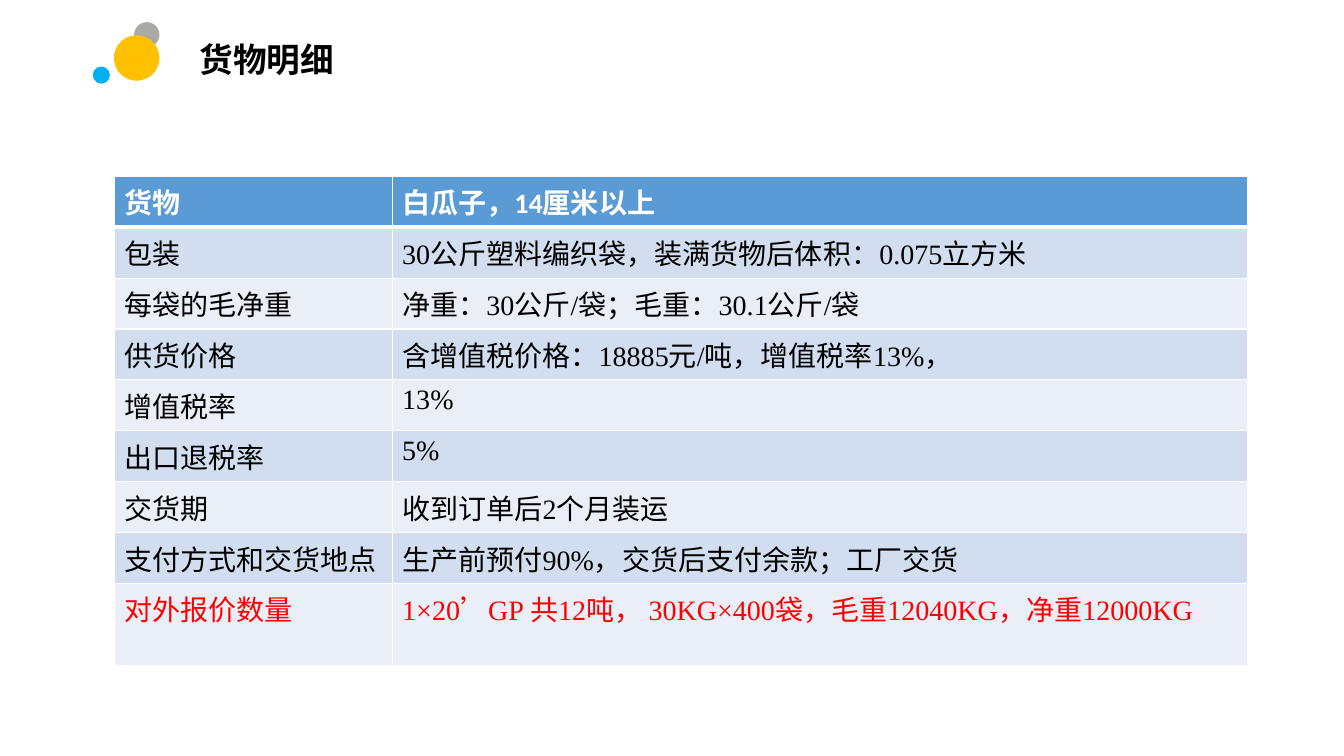
from dataclasses import dataclass

from lxml import etree
from pptx import Presentation
from pptx.dml.color import RGBColor
from pptx.enum.shapes import MSO_SHAPE
from pptx.enum.text import MSO_ANCHOR
from pptx.oxml.ns import qn
from pptx.slide import Slide
from pptx.table import _Cell
from pptx.text.text import TextFrame
from pptx.util import Emu, Inches, Pt

OVAL = MSO_SHAPE.OVAL
MIDDLE = MSO_ANCHOR.MIDDLE

SLIDE_WIDTH = Inches(13.33)
SLIDE_HEIGHT = Inches(7.5)

BLACK = RGBColor(0x00, 0x00, 0x00)
WHITE = RGBColor(0xFF, 0xFF, 0xFF)
RED = RGBColor(0xFF, 0x00, 0x00)
GREY = RGBColor(0xA8, 0xAA, 0xA5)
AMBER = RGBColor(0xFF, 0xC0, 0x00)
SKY = RGBColor(0x00, 0xB0, 0xF0)
HEADER_BLUE = RGBColor(0x5B, 0x9B, 0xD5)
BANDS = (RGBColor(0xEA, 0xEF, 0xF7), RGBColor(0xD2, 0xDE, 0xEF))

HEADING_FONT = "Calibri"
BODY_FONT = "Times New Roman"

# Shares are percentages of the slide's width or height.
TABLE_LEFT, TABLE_TOP = 8.48, 23.33
COLUMN_SHARES = (20.7, 63.67)
ROW_SHARE, LAST_ROW_SHARE = 6.73, 10.8


@dataclass(frozen=True)
class Dot:
    left: float
    top: float
    diameter: float
    color: RGBColor


@dataclass(frozen=True)
class Detail:
    label: str
    value: str
    color: RGBColor = BLACK


DOTS = (
    Dot(9.98, 2.93, 1.88, GREY),
    Dot(8.48, 4.67, 3.38, AMBER),
    Dot(6.9, 8.8, 1.28, SKY),
)

DETAILS = (
    Detail("货物", "白瓜子，14厘米以上", WHITE),
    Detail("包装", "30公斤塑料编织袋，装满货物后体积：0.075立方米"),
    Detail("每袋的毛净重", "净重：30公斤/袋；毛重：30.1公斤/袋"),
    Detail("供货价格", "含增值税价格：18885元/吨，增值税率13%，"),
    Detail("增值税率", "13%"),
    Detail("出口退税率", "5%"),
    Detail("交货期", "收到订单后2个月装运"),
    Detail("支付方式和交货地点", "生产前预付90%，交货后支付余款；工厂交货"),
    Detail("对外报价数量", "1×20’GP 共12吨， 30KG×400袋，毛重12040KG，净重12000KG", RED),
)


def across(share: float) -> Emu:
    return Emu(round(SLIDE_WIDTH * share / 100))


def down(share: float) -> Emu:
    return Emu(round(SLIDE_HEIGHT * share / 100))


def write_text(frame: TextFrame, text: str, *, font: str, size: float,
               color: RGBColor, bold: bool = False,
               line_spacing: float = 1.0) -> None:
    paragraph = frame.paragraphs[0]
    paragraph.line_spacing = line_spacing
    run = paragraph.add_run()
    run.text = text
    run.font.name = font
    run.font.size = Pt(size)
    run.font.bold = bold
    run.font.color.rgb = color


def draw_dot(slide: Slide, dot: Dot) -> None:
    diameter = across(dot.diameter)
    shape = slide.shapes.add_shape(OVAL, across(dot.left), down(dot.top),
                                   diameter, diameter)
    shape.shadow.inherit = False
    shape.fill.solid()
    shape.fill.fore_color.rgb = dot.color
    shape.line.fill.background()


def draw_title(slide: Slide, text: str) -> None:
    box = slide.shapes.add_textbox(across(14.1), down(4.67),
                                   across(34.66), down(7.07))
    box.text_frame.word_wrap = True
    box.text_frame.vertical_anchor = MIDDLE
    write_text(box.text_frame, text, font=HEADING_FONT, size=24,
               color=BLACK, bold=True, line_spacing=0.9)


def style_cell(cell: _Cell, fill: RGBColor, top: float, bottom: float) -> None:
    """Give the cell white borders, with widths in points, and a fill."""
    properties = cell._tc.get_or_add_tcPr()
    widths = {"a:lnL": 1, "a:lnR": 1, "a:lnT": top, "a:lnB": bottom}
    for tag, width in widths.items():
        border = etree.SubElement(properties, qn(tag), w=str(Pt(width)))
        solid = etree.SubElement(border, qn("a:solidFill"))
        etree.SubElement(solid, qn("a:srgbClr"), val=str(WHITE))
    cell.fill.solid()
    cell.fill.fore_color.rgb = fill


def draw_details(slide: Slide, details: tuple[Detail, ...]) -> None:
    row_shares = [ROW_SHARE] * (len(details) - 1) + [LAST_ROW_SHARE]
    table = slide.shapes.add_table(
        len(details), len(COLUMN_SHARES), across(TABLE_LEFT), down(TABLE_TOP),
        across(sum(COLUMN_SHARES)), down(sum(row_shares))).table
    for column, share in zip(table.columns, COLUMN_SHARES):
        column.width = across(share)
    for index, (detail, share) in enumerate(zip(details, row_shares)):
        is_header = index == 0
        table.rows[index].height = down(share)
        for column_index, text in enumerate((detail.label, detail.value)):
            cell = table.cell(index, column_index)
            style_cell(cell, HEADER_BLUE if is_header else BANDS[index % 2],
                       top=3 if index == 1 else 1,
                       bottom=3 if is_header else 1)
            write_text(cell.text_frame, text,
                       font=HEADING_FONT if is_header else BODY_FONT,
                       size=20, color=detail.color, bold=is_header)


def main() -> None:
    presentation = Presentation()
    presentation.slide_width = SLIDE_WIDTH
    presentation.slide_height = SLIDE_HEIGHT
    slide = presentation.slides.add_slide(presentation.slide_layouts[6])
    draw_details(slide, DETAILS)
    for dot in DOTS:
        draw_dot(slide, dot)
    draw_title(slide, "货物明细")
    presentation.save("out.pptx")


if __name__ == "__main__":
    main()
